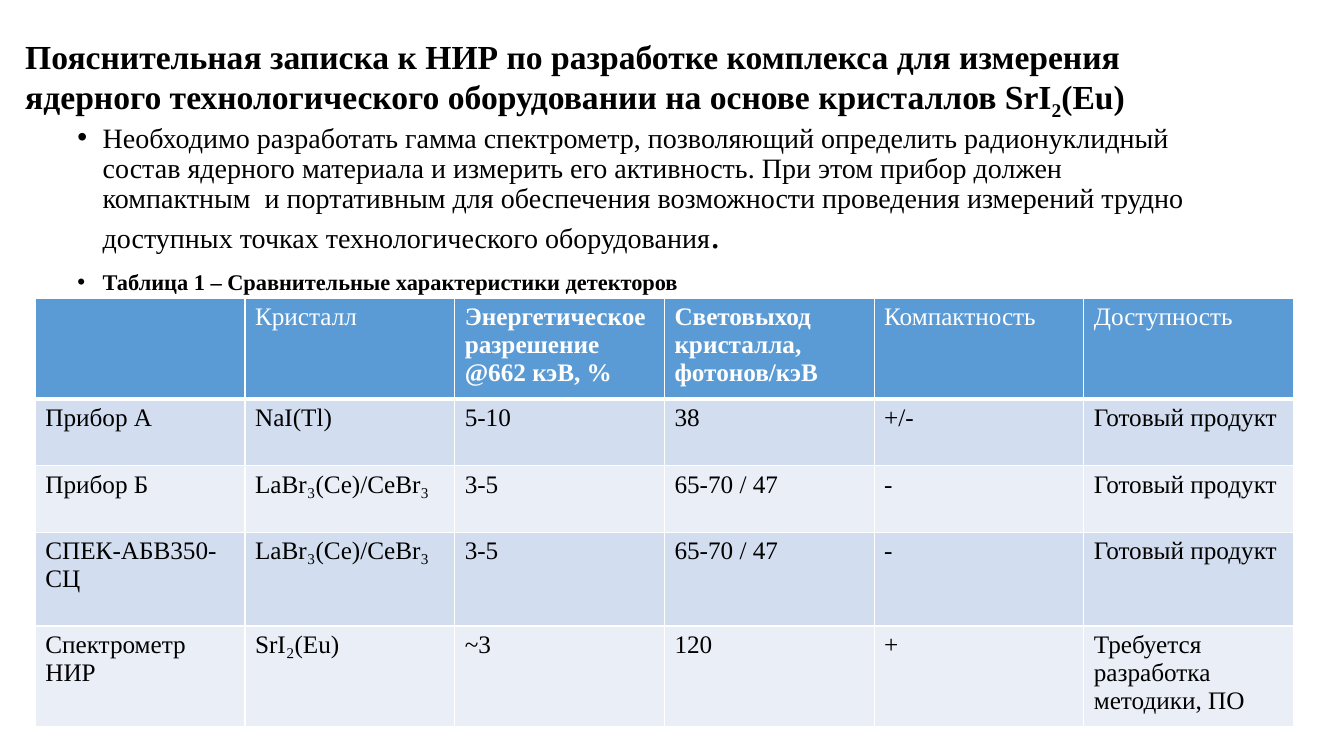
from dataclasses import dataclass

from lxml import etree
from pptx import Presentation
from pptx.dml.color import RGBColor
from pptx.enum import text as t
from pptx.oxml import ns
from pptx.util import Inches, Pt


@dataclass(frozen=True)
class Theme:
    """Hold the colours, font and type sizes."""
    font: str = "Times New Roman"
    ink: str = "000000"
    white: str = "FFFFFF"
    head: str = "5B9BD5"
    bands: tuple = ("D2DEEF", "EAEFF7")
    title: int = 24
    body: int = 20
    large: int = 28
    note: int = 16
    cell: int = 18


def write(para, text, size, color, font, bold=False, base=0):
    """Add a formatted run to a paragraph."""
    run = para.add_run()
    run.text = text
    run.font.size = Pt(size)
    run.font.name = font
    run.font.bold = bold
    run.font.color.rgb = RGBColor.from_string(color)
    if base:
        run.font._element.set("baseline", str(base * 1000))


class Deck:
    """Build slide elements in one style."""

    def __init__(self, style):
        """Start a deck with one title-only slide."""
        self.style = style
        self.prs = Presentation()
        self.prs.slide_width = Inches(13.33)
        self.prs.slide_height = Inches(7.5)
        self.slide = self.prs.slides.add_slide(self.prs.slide_layouts[5])

    def title(self, box, parts):
        """Fill the title with parts of text and baseline shift."""
        st = self.style
        shape = self.slide.shapes.title
        shape.left, shape.top, shape.width, shape.height = map(Inches, box)
        frame = shape.text_frame
        frame.auto_size = t.MSO_AUTO_SIZE.NONE
        frame.vertical_anchor = t.MSO_ANCHOR.MIDDLE
        para = frame.paragraphs[0]
        para.alignment = t.PP_ALIGN.LEFT
        para.line_spacing = 0.9
        for text, base in parts:
            write(para, text, st.title, st.ink, st.font, bold=True, base=base)
        para.add_line_break()
        size = str(st.large * 100)
        etree.SubElement(para._p[-1], ns.qn("a:rPr"), sz=size)
        etree.SubElement(para._p, ns.qn("a:endParaRPr"), sz=size)

    def bullets(self, box, items):
        """Add a bulleted text box, each item a list of runs."""
        st = self.style
        frame = self.slide.shapes.add_textbox(*map(Inches, box)).text_frame
        frame.word_wrap = True
        for i, runs in enumerate(items):
            para = frame.add_paragraph() if i else frame.paragraphs[0]
            para.line_spacing = 0.9
            if i:
                para.space_before = Pt(10)
            props = para._p.get_or_add_pPr()
            props.set("marL", str(Inches(0.25)))
            props.set("indent", str(-Inches(0.25)))
            etree.SubElement(props, ns.qn("a:buFont"), typeface="Arial")
            etree.SubElement(props, ns.qn("a:buChar"), char="•")
            for text, size, bold in runs:
                write(para, text, size, st.ink, st.font, bold=bold)

    def edge(self, cell, side, width):
        """Draw one white cell border."""
        props = cell._tc.get_or_add_tcPr()
        line = etree.Element(ns.qn(f"a:ln{side}"), w=str(Pt(width)))
        fill = etree.SubElement(line, ns.qn("a:solidFill"))
        etree.SubElement(fill, ns.qn("a:srgbClr"), val=self.style.white)
        props.insert("LRTB".index(side), line)

    def table(self, left, top, wide, highs, rows, strong):
        """Add a banded table; strong lists the bold header columns."""
        st = self.style
        grid = self.slide.shapes.add_table(
            len(rows), len(rows[0]), Inches(left), Inches(top),
            Inches(wide * len(rows[0])), Inches(sum(highs))).table
        for col in grid.columns:
            col.width = Inches(wide)
        for i, (row, high) in enumerate(zip(rows, highs)):
            grid.rows[i].height = Inches(high)
            fill = st.bands[(i - 1) % 2] if i else st.head
            color = st.ink if i else st.white
            for j, text in enumerate(row):
                cell = grid.cell(i, j)
                cell.fill.solid()
                cell.fill.fore_color.rgb = RGBColor.from_string(fill)
                for side in "LRTB":
                    thick = (i, side) in ((0, "B"), (1, "T"))
                    self.edge(cell, side, 3 if thick else 1)
                if text:
                    write(cell.text_frame.paragraphs[0], text, st.cell, color,
                          st.font, bold=i == 0 and j in strong)


def main():
    """Build and save the slide."""
    st = Theme()
    deck = Deck(st)
    deck.title((0.15, 0.29, 11.5, 1.45), [
        ("Пояснительная записка к НИР по разработке комплекса для измерения "
         "ядерного технологического оборудовании на основе кристаллов SrI", 0),
        ("2", -25), ("(Eu)", 0)])
    deck.bullets((0.67, 1.18, 11.5, 4.76), [
        [("Необходимо разработать гамма спектрометр, позволяющий определить "
          "радионуклидный состав ядерного материала и измерить его "
          "активность. При этом прибор должен компактным  и портативным для "
          "обеспечения возможности проведения измерений трудно доступных "
          "точках технологического оборудования", st.body, False),
         (".", st.large, False)],
        [("Таблица 1 – Сравнительные характеристики детекторов",
          st.note, True)]])
    ready = "Готовый продукт"
    bromide = ["LaBr₃(Ce)/CeBr₃", "3-5", "65-70 / 47", "-", ready]
    deck.table(0.35, 2.96, 2.08, (0.92, 0.66, 0.66, 0.93, 0.92), [
        ["", "Кристалл", "Энергетическое разрешение @662 кэВ, %",
         "Световыход кристалла, фотонов/кэВ", "Компактность", "Доступность"],
        ["Прибор А", "NaI(Tl)", "5-10", "38", "+/-", ready],
        ["Прибор Б", *bromide],
        ["СПЕК-АБВ350-СЦ", *bromide],
        ["Спектрометр НИР", "SrI₂(Eu)", "~3", "120", "+",
         "Требуется разработка методики, ПО"]], strong=(2, 3))
    deck.prs.save("out.pptx")


if __name__ == "__main__":
    main()
